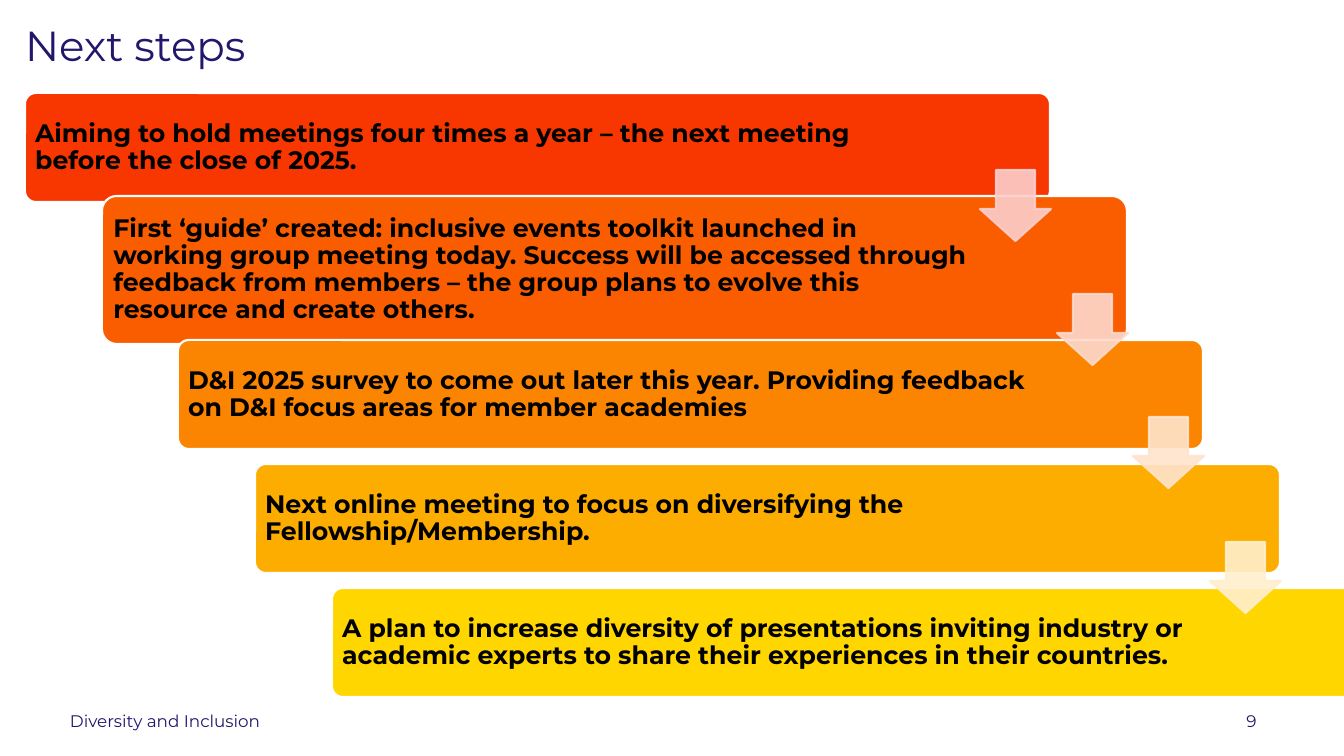
"""Build the "Next steps" slide: five staggered steps linked by down arrows."""
from lxml.etree import SubElement
from pptx import Presentation
from pptx.dml.color import RGBColor
from pptx.enum.shapes import MSO_SHAPE
from pptx.enum.text import MSO_ANCHOR, PP_ALIGN
from pptx.oxml.ns import qn
from pptx.util import Emu, Pt

PX = 914400 / 100.8
NAVY = "21176B"
STEP_LEFT, STEP_SHIFT, STEP_WIDTH = 25, 76.7, 1025
ARROW_OFFSET, ARROW_SIZE = 955, 71


def box(*lengths):
    return [Emu(round(length * PX)) for length in lengths]


def color(hex_string):
    return RGBColor.from_string(hex_string)


presentation = Presentation()
presentation.slide_width, presentation.slide_height = box(1344, 756)
slide = presentation.slides.add_slide(presentation.slide_layouts[6])

labels = [
    ("Next steps", (25, 25, 1204, 45), 30, MSO_ANCHOR.TOP, PP_ALIGN.LEFT, 0.9),
    ("Diversity and Inclusion", (70, 711, 454, 20), 12, MSO_ANCHOR.MIDDLE, PP_ALIGN.LEFT, 1.0),
    ("9", (1229, 711, 45, 20), 12, MSO_ANCHOR.MIDDLE, PP_ALIGN.CENTER, 1.0),
]
for text, place, size, anchor, alignment, spacing in labels:
    frame = slide.shapes.add_textbox(*box(*place)).text_frame
    frame.word_wrap = True
    frame.vertical_anchor = anchor
    frame.margin_left = frame.margin_top = frame.margin_right = frame.margin_bottom = 0
    paragraph = frame.paragraphs[0]
    paragraph.text = text
    paragraph.alignment = alignment
    paragraph.line_spacing = spacing
    paragraph.font.name = "Montserrat"
    paragraph.font.size = Pt(size)
    paragraph.font.color.rgb = color(NAVY)

steps = [
    (93, 109, 131, "F73600", "Aiming to hold meetings four times a year – the next meeting "
     "before the close of 2025."),
    (196, 148, 155, "F95D00", "First ‘guide’ created: inclusive events toolkit launched in "
     "working group meeting today. Success will be accessed through feedback from members "
     "– the group plans to evolve this resource and create others."),
    (340, 109, 155, "FB8500", "D&I 2025 survey to come out later this year. Providing feedback "
     "on D&I focus areas for member academies"),
    (464, 109, 155, "FDAD00", "Next online meeting to focus on diversifying the "
     "Fellowship/Membership."),
    (588, 109, 155, "FFD600", "A plan to increase diversity of presentations inviting industry or "
     "academic experts to share their experiences in their countries."),
]
for index, (top, height, right_margin, fill, text) in enumerate(steps):
    left = STEP_LEFT + round(STEP_SHIFT * index)
    step = slide.shapes.add_shape(MSO_SHAPE.ROUNDED_RECTANGLE, *box(left, top, STEP_WIDTH, height))
    step.adjustments[0] = 0.1
    step.shadow.inherit = False
    step.fill.solid()
    step.fill.fore_color.rgb = color(fill)
    step.line.color.rgb = color("FFFFFF")
    step.line.width = Pt(1.5)
    frame = step.text_frame
    frame.word_wrap = True
    frame.vertical_anchor = MSO_ANCHOR.MIDDLE
    frame.margin_left, frame.margin_top, frame.margin_right, frame.margin_bottom = box(
        7, 7, right_margin, 7)
    paragraph = frame.paragraphs[0]
    paragraph.text = text
    paragraph.alignment = PP_ALIGN.LEFT
    paragraph.line_spacing = 0.9
    paragraph.font.name = "Montserrat"
    paragraph.font.size = Pt(18)
    paragraph.font.bold = True
    paragraph.font.color.rgb = color("000000")

arrows = [(170, "FCCECC"), (294, "FDD9CC"), (417, "FEE4CC"), (542, "FFEFCC")]
for index, (top, tint) in enumerate(arrows):
    left = STEP_LEFT + ARROW_OFFSET + round(STEP_SHIFT * index)
    arrow = slide.shapes.add_shape(MSO_SHAPE.DOWN_ARROW, *box(left, top, ARROW_SIZE, ARROW_SIZE))
    arrow.adjustments[0], arrow.adjustments[1] = 0.55, 0.45
    arrow.shadow.inherit = False
    arrow.fill.solid()
    arrow.fill.fore_color.rgb = color(tint)
    arrow.line.color.rgb = color(tint)
    arrow.line.width = Pt(1.5)
    for tint_element in arrow.element.spPr.iter(qn("a:srgbClr")):
        SubElement(tint_element, qn("a:alpha"), val="90000")

presentation.save("out.pptx")
